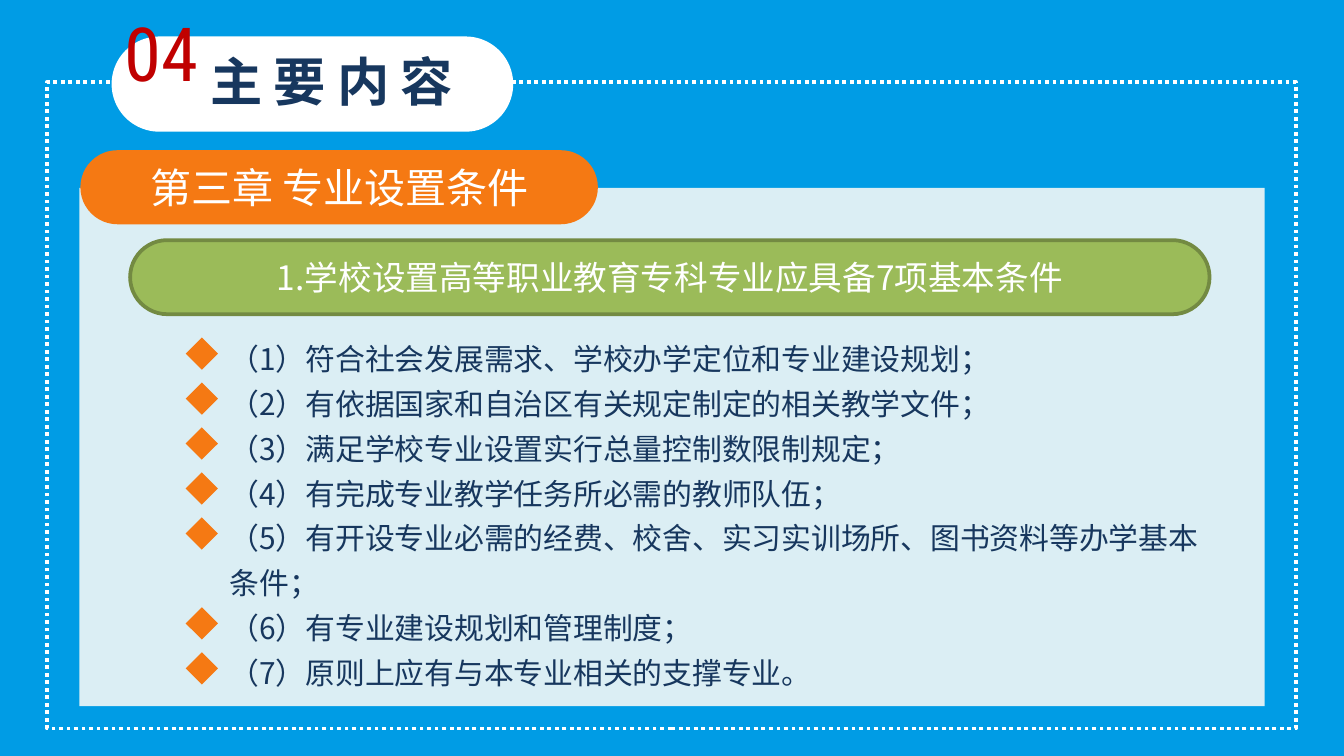
from pptx import Presentation
from pptx.dml.color import RGBColor
from pptx.enum.dml import MSO_LINE as Dash
from pptx.enum.shapes import MSO_SHAPE as Kind
from pptx.enum.text import MSO_ANCHOR as Anchor, MSO_AUTO_SIZE as Fit, PP_ALIGN as Align
from pptx.oxml import parse_xml
from pptx.oxml.ns import nsdecls, qn
from pptx.util import Cm, Pt

HAN = "Noto Sans CJK SC"
WHITE, NAVY, ORANGE = "FFFFFF", "17375E", "F57913"
ITEMS = [
    "（1）符合社会发展需求、学校办学定位和专业建设规划；",
    "（2）有依据国家和自治区有关规定制定的相关教学文件；",
    "（3）满足学校专业设置实行总量控制数限制规定；",
    "（4）有完成专业教学任务所必需的教师队伍；",
    "（5）有开设专业必需的经费、校舍、实习实训场所、图书资料等办学基本条件；",
    "（6）有专业建设规划和管理制度；",
    "（7）原则上应有与本专业相关的支撑专业。",
]
ROWS = [0, 1, 2, 3, 4, 6, 7]


def paint(fmt, color):
    fmt.solid()
    fmt.fore_color.rgb = RGBColor.from_string(color)


def add_run(par, text, size, color, face=HAN, bold=False):
    run = par.add_run()
    run.text = text
    font = run.font
    font.size, font.bold, font.name = Pt(size), bold, face
    paint(font.fill, color)
    props = run._r.get_or_add_rPr()
    props.find(qn("a:latin")).addnext(
        parse_xml(f'<a:ea {nsdecls("a")} typeface="{face}"/>'))
    return props


def add_form(slide, kind, box, fill=None, line=None, width=2):
    form = slide.shapes.add_shape(kind, *map(Cm, box))
    form.shadow.inherit = False
    if fill:
        paint(form.fill, fill)
    else:
        form.fill.background()
    if line:
        paint(form.line.fill, line)
        form.line.width = Pt(width)
    else:
        form.line.fill.background()
    return form


def add_pill(slide, box, fill, line=None, text=None, size=18):
    pill = add_form(slide, Kind.ROUNDED_RECTANGLE, box, fill, line)
    pill.adjustments[0] = 0.5
    if text:
        frame = pill.text_frame
        frame.vertical_anchor = Anchor.MIDDLE
        par = frame.paragraphs[0]
        par.alignment = Align.CENTER
        add_run(par, text, size, WHITE)


def add_text(slide, box, wrap=True):
    frame = slide.shapes.add_textbox(*map(Cm, box)).text_frame
    frame.word_wrap = wrap
    frame.auto_size = Fit.SHAPE_TO_FIT_TEXT
    return frame


def add_head(slide):
    add_pill(slide, (2.11, 0.69, 7.59, 1.8), WHITE)
    frame = add_text(slide, (2.11, 0, 1.98, 1.96), wrap=False)
    props = add_run(frame.paragraphs[0], "04", 40, "C00000", "Roboto Condensed")
    props.insert(0, parse_xml(
        f'<a:ln {nsdecls("a")} w="{Pt(2.25)}"><a:solidFill>'
        f'<a:srgbClr val="{WHITE}"/></a:solidFill></a:ln>'))
    frame = add_text(slide, (3.73, 0.81, 5.51, 1.45))
    props = add_run(frame.paragraphs[0], "主要内容", 28, NAVY, bold=True)
    props.set("spc", "600")


def add_list(slide):
    frame = add_text(slide, (4.09, 6.15, 19, 7.9))
    for num, (item, row) in enumerate(zip(ITEMS, ROWS)):
        par = frame.add_paragraph() if num else frame.paragraphs[0]
        par.line_spacing = Pt(24)
        add_run(par, item, 16, NAVY)
        add_form(slide, Kind.DIAMOND, (3.51, 6.38 + 0.85 * row, 0.61, 0.61), ORANGE)


def main():
    deck = Presentation()
    deck.slide_width, deck.slide_height = Cm(25.4), Cm(14.29)
    slide = deck.slides.add_slide(deck.slide_layouts[6])
    paint(slide.background.fill, "009CE5")
    border = add_form(slide, Kind.RECTANGLE, (0.89, 1.55, 23.6, 12.22), line=WHITE)
    border.line.dash_style = Dash.ROUND_DOT
    add_head(slide)
    add_form(slide, Kind.RECTANGLE, (1.5, 3.55, 22.4, 9.8), "DBEEF4")
    add_pill(slide, (1.52, 2.84, 9.78, 1.4), ORANGE,
             text="第三章 专业设置条件", size=22)
    add_pill(slide, (2.46, 4.54, 20.4, 1.4), "9BBB59", "738A42",
             "1.学校设置高等职业教育专科专业应具备7项基本条件")
    add_list(slide)
    deck.save("out.pptx")


if __name__ == "__main__":
    main()
